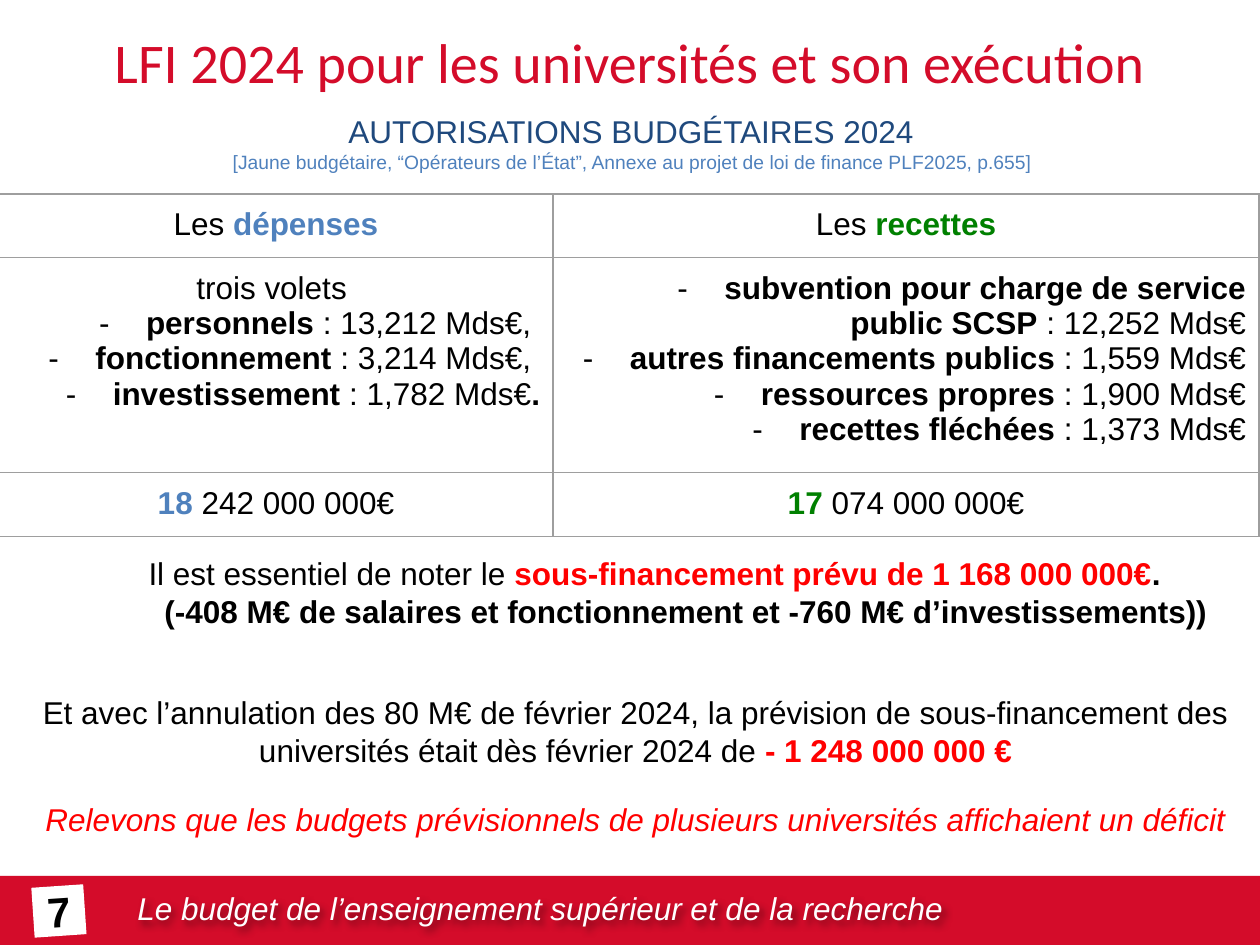
from lxml.etree import SubElement as Sub
from pptx import Presentation
from pptx.dml.color import RGBColor
from pptx.enum.shapes import MSO_SHAPE as Shape
from pptx.enum.text import MSO_ANCHOR as Anchor, MSO_AUTO_SIZE as Auto, PP_ALIGN as Align
from pptx.oxml.ns import qn
from pptx.util import Emu, Pt

RED, BLACK, WHITE = "D40C2A", "000000", "FFFFFF"
ALERT, BLUE, NAVY, GREEN = "FF0000", "4F81BD", "1F497D", "008000"
hue = RGBColor.from_string


def px(*nums):
    return [Emu(round(n * 914400 / 126)) for n in nums]


def say(para, text, color=BLACK, size=18, bold=False, ital=False, face="Arial"):
    run = para.add_run()
    run.text = text
    font = run.font
    font.name, font.size, font.bold, font.italic = face, Pt(size), bold, ital
    font.color.rgb = hue(color)


deck = Presentation()
deck.slide_width, deck.slide_height = px(1260, 945)
slide = deck.slides.add_slide(deck.slide_layouts[5])
shapes = slide.shapes

# Title
title = shapes.title
title.left, title.top, title.width, title.height = px(0, 0, 1260, 123)
frame = title.text_frame
frame.auto_size = Auto.NONE
frame.vertical_anchor = Anchor.MIDDLE
para = frame.paragraphs[0]
para.alignment = Align.CENTER
say(para, "LFI 2024 pour les universités et son exécution", RED, 32, face="Calibri")

# Footer band and caption, each with a soft shadow
band = shapes.add_shape(Shape.RECTANGLE, *px(0, 876, 1260, 69))
band.fill.solid()
band.fill.fore_color.rgb = hue(RED)
band.line.fill.background()
foot = shapes.add_textbox(*px(125, 883, 917, 50))
foot.text_frame.word_wrap = True
say(foot.text_frame.paragraphs[0],
    "Le budget de l’enseignement supérieur et de la recherche", WHITE, ital=True)
for item, color, alpha, blur, dist, angle in [
    (band, "808080", 35, 3, 2, 90),
    (foot, BLACK, 43, 4, 3, 45),
]:
    fx = Sub(item.element.spPr, qn("a:effectLst")) if item is foot else None
    if fx is None:
        item.shadow.inherit = False
        fx = item.element.spPr.find(qn("a:effectLst"))
    glow = Sub(fx, qn("a:outerShdw"), blurRad=str(Pt(blur)), dist=str(Pt(dist)),
               dir=str(angle * 60000), rotWithShape="0")
    Sub(Sub(glow, qn("a:srgbClr"), val=color), qn("a:alpha"), val=str(alpha * 1000))

# Tilted page number
badge = shapes.add_shape(Shape.RECTANGLE, *px(33, 886, 52, 50))
badge.rotation = 356.1
badge.shadow.inherit = False
badge.fill.solid()
badge.fill.fore_color.rgb = hue(WHITE)
badge.line.fill.background()
frame = badge.text_frame
frame.margin_left = frame.margin_right = frame.margin_top = frame.margin_bottom = 0
frame.vertical_anchor = Anchor.MIDDLE
para = frame.paragraphs[0]
para.alignment = Align.CENTER
say(para, "7", BLACK, 24, True)

# Centred texts: box, then paragraphs of (space before, left indent, runs)
texts = [
    ((21, 106, 1229, 74), [
        (0, 0, [("AUTORISATIONS BUDGÉTAIRES 2024 ", NAVY)]),
        (0, 0, [("[Jaune budgétaire, “Opérateurs de l’État”, Annexe au projet de loi "
                 "de finance PLF2025, p.655] ", BLUE, 11)]),
    ]),
    ((40, 548, 1229, 89), [
        (0, 0, [("Il est essentiel de noter le ",),
                ("sous-financement prévu de 1 168 000 000€", ALERT, 18, True),
                (".", BLACK, 18, True)]),
        (0, 63, [("(-408 M€ de salaires et fonctionnement et -760 M€ "
                  "d’investissements))", BLACK, 18, True)]),
    ]),
    ((11, 687, 1249, 158), [
        (0, 0, [("Et avec l’annulation des 80 M€ de février 2024, la prévision de "
                 "sous-financement des universités était dès février 2024 de ",),
                ("- 1 248 000 000 €", ALERT, 18, True)]),
        (18, 0, [("Relevons que les budgets prévisionnels de plusieurs universités "
                  "affichaient un déficit", ALERT, 18, False, True)]),
    ]),
]
for box, paras in texts:
    frame = shapes.add_textbox(*px(*box)).text_frame
    frame.word_wrap = True
    for i, (gap, left, runs) in enumerate(paras):
        para = frame.add_paragraph() if i else frame.paragraphs[0]
        para.alignment = Align.CENTER
        if gap:
            para.space_before = Pt(gap)
        if left:
            para._p.get_or_add_pPr().set("marL", str(px(left)[0]))
        for run in runs:
            say(para, *run)

# Budget table: cells hold paragraphs of (is bullet, runs of text, bold, colour)
rows = [
    [[(False, [("Les ", False, BLACK), ("dépenses", True, BLUE)])],
     [(False, [("Les ", False, BLACK), ("recettes", True, GREEN)])]],
    [[(False, [("trois volets ", False, BLACK)]),
      (True, [("personnels", True, BLACK), (" : 13,212 Mds€, ", False, BLACK)]),
      (True, [("fonctionnement ", True, BLACK), (": 3,214 Mds€, ", False, BLACK)]),
      (True, [("investissement ", True, BLACK), (": 1,782 Mds€", False, BLACK),
              (".", True, BLACK)])],
     [(True, [(name, True, BLACK), (f" : {sum_}", False, BLACK)]) for name, sum_ in [
         ("subvention pour charge de service public SCSP", "12,252 Mds€"),
         ("autres financements publics", "1,559 Mds€ "),
         ("ressources propres", "1,900 Mds€"),
         ("recettes fléchées", "1,373 Mds€")]]],
    [[(False, [("18 ", True, BLUE), ("242 000 000€", False, BLACK)])],
     [(False, [("17 ", True, GREEN), ("074 000 000€", False, BLACK)])]],
]
table = shapes.add_table(3, 2, *px(-1, 194, 1260, 340)).table
table.first_row = table.horz_banding = False
for col, wide in zip(table.columns, px(554, 706)):
    col.width = wide
for row, high in zip(table.rows, px(63, 214, 63)):
    row.height = high
pad = px(13)[0]
for r, row in enumerate(rows):
    for c, paras in enumerate(row):
        cell = table.cell(r, c)
        cell.margin_left = cell.margin_right = cell.margin_top = cell.margin_bottom = pad
        props = cell._tc.get_or_add_tcPr()
        for side in ("lnL", "lnR", "lnT", "lnB"):
            line = Sub(props, qn(f"a:{side}"), w=str(Pt(0.75)))
            Sub(Sub(line, qn("a:solidFill")), qn("a:srgbClr"), val="9E9E9E")
        cell.fill.background()
        for i, (dash, runs) in enumerate(paras):
            frame = cell.text_frame
            para = frame.add_paragraph() if i else frame.paragraphs[0]
            para.alignment = Align.RIGHT if dash else Align.CENTER
            if dash:
                form = para._p.get_or_add_pPr()
                left, hang = px(63, -47)
                form.set("marL", str(left))
                form.set("indent", str(hang))
                Sub(Sub(form, qn("a:buClr")), qn("a:srgbClr"), val=BLACK)
                Sub(form, qn("a:buFont"), typeface="Arial")
                Sub(form, qn("a:buChar"), char="-")
            for text, bold, color in runs:
                say(para, text, color, bold=bold)

deck.save("out.pptx")
